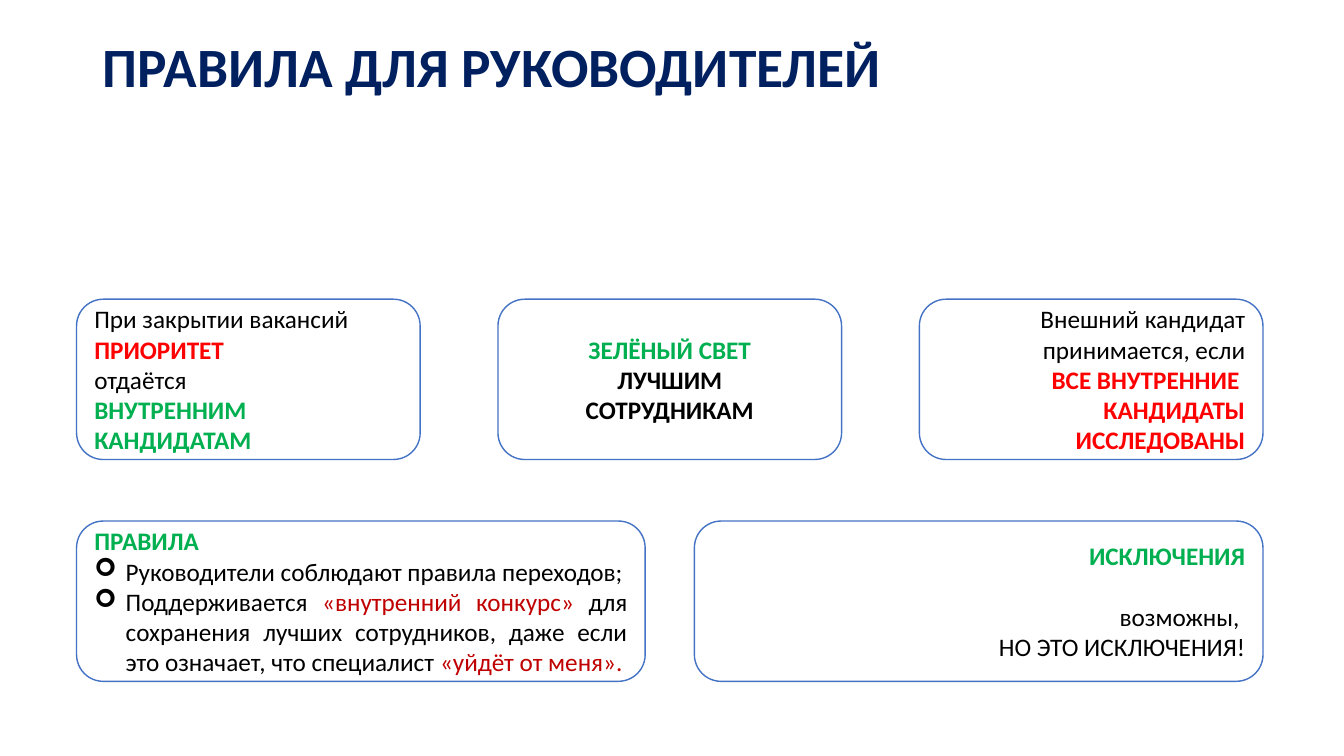
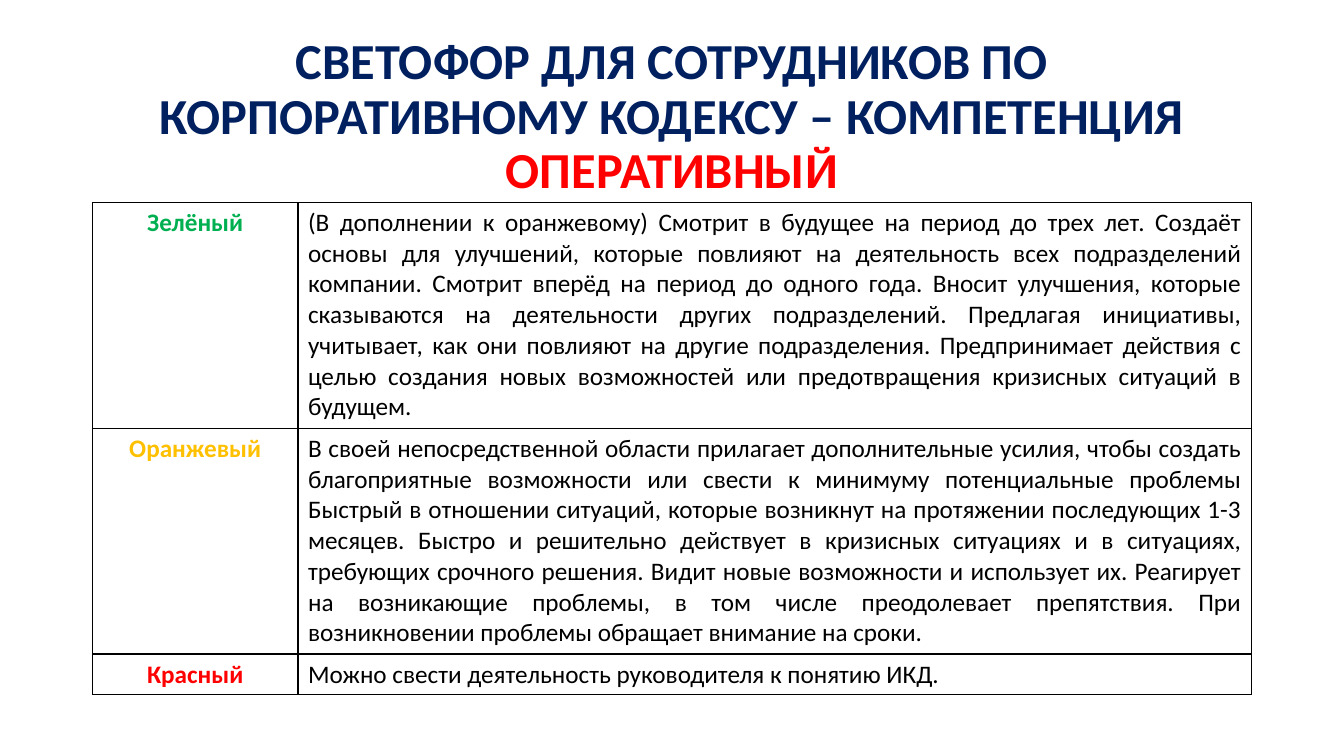
from lxml import etree
from pptx import Presentation
from pptx.dml.color import RGBColor
from pptx.enum.shapes import MSO_SHAPE as Shape
from pptx.enum.text import MSO_ANCHOR as Anchor, MSO_AUTO_SIZE as AutoSize, PP_ALIGN as Align
from pptx.oxml.ns import qn
from pptx.util import Cm, Pt

NAVY = RGBColor(0x00, 0x20, 0x60)
BLUE = RGBColor(0x44, 0x72, 0xC4)
GREEN = RGBColor(0x00, 0xB0, 0x50)
AMBER = RGBColor(0xFF, 0xC0, 0x00)
RED = RGBColor(0xFF, 0x00, 0x00)
DARK_RED = RGBColor(0xC0, 0x00, 0x00)
BLACK = RGBColor(0x00, 0x00, 0x00)
WHITE = RGBColor(0xFF, 0xFF, 0xFF)
FONT = "Calibri"
BODY_SIZE = 18
TITLE_ONLY = 5

# Frame shared by the rows of cards
CARDS_LEFT, CARDS_WIDTH, CARD_HEIGHT = 1.93, 29.9, 4.04

PRIORITY = [
    [("При закрытии вакансий", BLACK, False)],
    [("ПРИОРИТЕТ", RED, True)],
    [("отдаётся", BLACK, False)],
    [("ВНУТРЕННИМ", GREEN, True)],
    [("КАНДИДАТАМ", GREEN, True)],
]
GREEN_LIGHT = [
    [("ЗЕЛЁНЫЙ СВЕТ", GREEN, True)],
    [("ЛУЧШИМ", BLACK, True)],
    [("СОТРУДНИКАМ", BLACK, True)],
]
EXTERNAL = [
    [("Внешний кандидат принимается, если", BLACK, False)],
    [("ВСЕ ВНУТРЕННИЕ ", RED, True)],
    [("КАНДИДАТЫ", RED, True)],
    [("ИССЛЕДОВАНЫ", RED, True)],
]
RULES = [
    [("ПРАВИЛА", GREEN, True)],
    [("Руководители соблюдают правила переходов;", BLACK, False)],
    [("Поддерживается ", BLACK, False),
     ("«внутренний конкурс» ", DARK_RED, False),
     ("для сохранения лучших сотрудников, даже если это означает, "
      "что специалист ", BLACK, False),
     ("«уйдёт от меня».", DARK_RED, False)],
]
EXCEPTIONS = [
    [("ИСКЛЮЧЕНИЯ", GREEN, True)],
    [("возможны, ", BLACK, False)],
    [("НО ЭТО ИСКЛЮЧЕНИЯ!", BLACK, False)],
]
TRAFFIC_LIGHT = [
    ("Зелёный", GREEN, 5.69,
     "(В дополнении к оранжевому) Смотрит в будущее на период до трех лет. "
     "Создаёт основы для улучшений, которые повлияют на деятельность всех "
     "подразделений компании. Смотрит вперёд на период до одного года. Вносит "
     "улучшения, которые сказываются на деятельности других подразделений. "
     "Предлагая инициативы, учитывает, как они повлияют на другие подразделения. "
     "Предпринимает действия с целью создания новых возможностей или "
     "предотвращения кризисных ситуаций в будущем."),
    ("Оранжевый", AMBER, 5.69,
     "В своей непосредственной области прилагает дополнительные усилия, чтобы "
     "создать благоприятные возможности или свести к минимуму потенциальные "
     "проблемы Быстрый в отношении ситуаций, которые возникнут на протяжении "
     "последующих 1-3 месяцев. Быстро и решительно действует в кризисных "
     "ситуациях и в ситуациях, требующих срочного решения. Видит новые "
     "возможности и использует их. Реагирует на возникающие проблемы, в том "
     "числе преодолевает препятствия. При возникновении проблемы обращает "
     "внимание на сроки."),
    ("Красный", RED, 1.03,
     "Можно свести деятельность руководителя к понятию ИКД."),
]


def set_values(target, values):
    for name, value in values.items():
        setattr(target, name, value)


def add_run(paragraph, text, color, bold, size=BODY_SIZE):
    run = paragraph.add_run()
    run.text = text
    set_values(run.font, {"name": FONT, "size": Pt(size), "bold": bold})
    run.font.color.rgb = color


def write_paragraphs(frame, paragraphs, align):
    for index, runs in enumerate(paragraphs):
        paragraph = frame.paragraphs[0] if index == 0 else frame.add_paragraph()
        paragraph.alignment = align
        for run in runs:
            add_run(paragraph, *run)


def add_bullet(paragraph):
    properties = paragraph._p.get_or_add_pPr()
    properties.set("marL", str(Cm(0.79)))
    properties.set("indent", str(-Cm(0.79)))
    etree.SubElement(properties, qn("a:buFont"), typeface="Wingdings")
    etree.SubElement(properties, qn("a:buChar"), char="➢")


def place_title(slide, box, lines, size, align):
    """Each line is a (text, color) pair."""
    title = slide.shapes.title
    set_values(title, dict(zip(("left", "top", "width", "height"), map(Cm, box))))
    set_values(title.text_frame, {"vertical_anchor": Anchor.MIDDLE,
                                  "word_wrap": True, "auto_size": AutoSize.NONE})
    paragraph = title.text_frame.paragraphs[0]
    set_values(paragraph, {"alignment": align, "line_spacing": 0.9})
    for index, (text, color) in enumerate(lines):
        if index:
            paragraph.add_line_break()
        add_run(paragraph, text, color, True, size)


def add_card(slide, box, paragraphs, align):
    card = slide.shapes.add_shape(Shape.ROUNDED_RECTANGLE, *map(Cm, box))
    card.shadow.inherit = False
    card.fill.solid()
    card.fill.fore_color.rgb = WHITE
    card.line.color.rgb = BLUE
    card.line.width = Pt(1)
    set_values(card.text_frame, {"word_wrap": True, "vertical_anchor": Anchor.MIDDLE})
    write_paragraphs(card.text_frame, paragraphs, align)
    return card.text_frame.paragraphs


def add_card_row(slide, top, card_width, cards):
    """Spread the cards evenly over the shared frame."""
    step = (CARDS_WIDTH - card_width) / (len(cards) - 1)
    return [add_card(slide, (CARDS_LEFT + index * step, top, card_width, CARD_HEIGHT),
                     paragraphs, align)
            for index, (paragraphs, align) in enumerate(cards)]


def style_cell(cell):
    cell.fill.solid()
    cell.fill.fore_color.rgb = WHITE
    properties = cell._tc.get_or_add_tcPr()
    for index, side in enumerate(("a:lnL", "a:lnR", "a:lnT", "a:lnB")):
        border = etree.Element(qn(side), w=str(Pt(1)))
        fill = etree.SubElement(border, qn("a:solidFill"))
        etree.SubElement(fill, qn("a:srgbClr"), val=str(BLACK))
        properties.insert(index, border)


def add_traffic_light(slide, left, top, width, label_width):
    height = sum(row[2] for row in TRAFFIC_LIGHT)
    table = slide.shapes.add_table(len(TRAFFIC_LIGHT), 2, Cm(left), Cm(top),
                                   Cm(width), Cm(height)).table
    set_values(table, {"first_row": False, "horz_banding": False})
    table.columns[0].width = Cm(label_width)
    table.columns[1].width = Cm(width - label_width)
    for row, (label, color, row_height, behaviour) in enumerate(TRAFFIC_LIGHT):
        table.rows[row].height = Cm(row_height)
        contents = [((label, color, True), Align.CENTER),
                    ((behaviour, BLACK, False), Align.JUSTIFY)]
        for column, (run, align) in enumerate(contents):
            cell = table.cell(row, column)
            style_cell(cell)
            write_paragraphs(cell.text_frame, [[run]], align)


def build_rules_slide(deck):
    slide = deck.slides.add_slide(deck.slide_layouts[TITLE_ONLY])
    place_title(slide, (2.33, 1.02, 29.21, 1.45),
                [("ПРАВИЛА ДЛЯ РУКОВОДИТЕЛЕЙ", NAVY)], 39.6, Align.LEFT)
    add_card_row(slide, 7.54, 8.66, [(PRIORITY, Align.JUSTIFY),
                                     (GREEN_LIGHT, Align.CENTER),
                                     (EXTERNAL, Align.RIGHT)])
    rules, exceptions = add_card_row(slide, 13.13, 14.33,
                                     [(RULES, Align.JUSTIFY),
                                      (EXCEPTIONS, Align.RIGHT)])
    for rule in rules[1:]:
        add_bullet(rule)
    exceptions[1].space_before = Pt(22)


def build_traffic_light_slide(deck):
    slide = deck.slides.add_slide(deck.slide_layouts[TITLE_ONLY])
    place_title(slide, (2.33, 0.66, 29.21, 4.62),
                [("СВЕТОФОР ДЛЯ СОТРУДНИКОВ ПО КОРПОРАТИВНОМУ КОДЕКСУ – КОМПЕТЕНЦИЯ",
                  NAVY), ("ОПЕРАТИВНЫЙ", RED)], 36, Align.CENTER)
    add_traffic_light(slide, 2.33, 5.1, 29.21, 5.18)


def main():
    deck = Presentation()
    set_values(deck, {"slide_width": Cm(33.87), "slide_height": Cm(19.05)})
    build_rules_slide(deck)
    build_traffic_light_slide(deck)
    deck.save("out.pptx")


if __name__ == "__main__":
    main()
